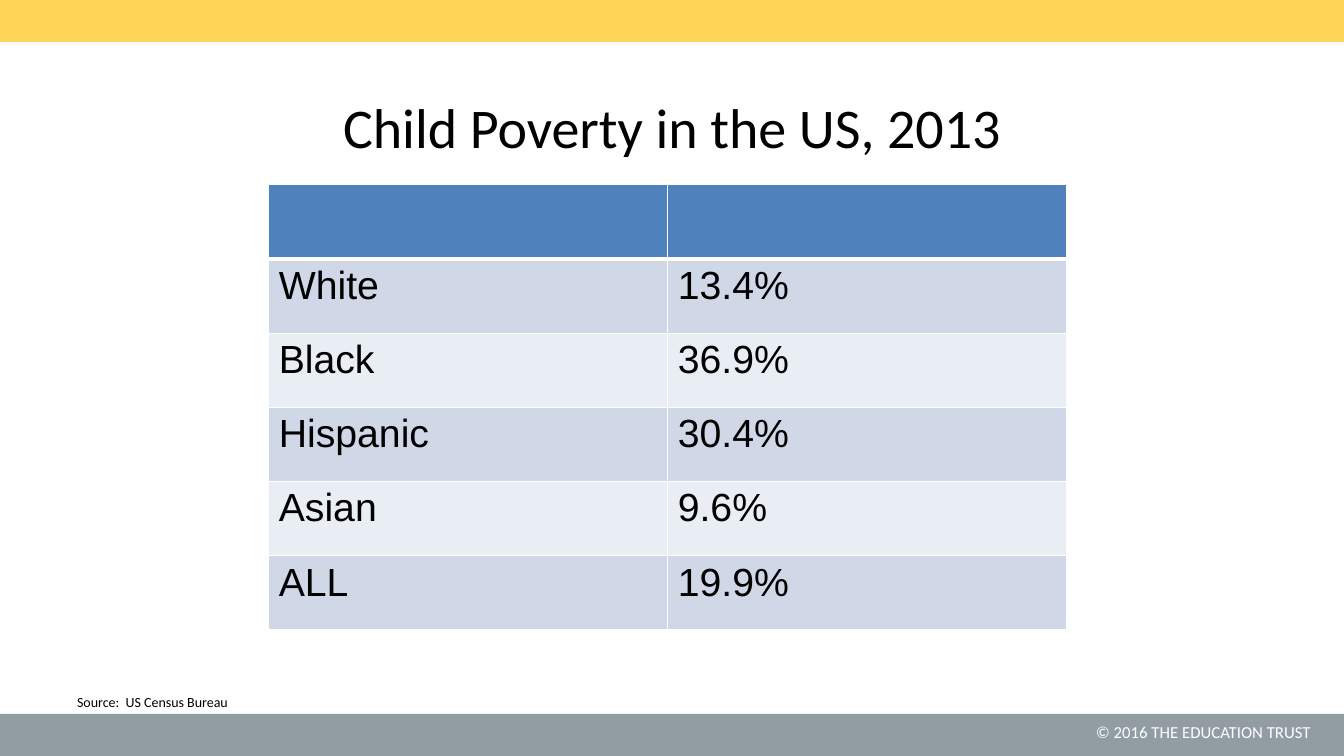
from typing import NamedTuple

from lxml import etree
from pptx import Presentation
from pptx import util as u
from pptx.dml.color import RGBColor
from pptx.enum import shapes, text
from pptx.oxml.ns import qn

PX = 9525
WIDE, HIGH = 1280, 720
WHITE, BLACK, BLUE = "FFFFFF", "000000", "4F81BD"
BANDS = ("D0D8E8", "E9EDF4")
LEFT, MID, RIGHT = text.PP_ALIGN.LEFT, text.PP_ALIGN.CENTER, text.PP_ALIGN.RIGHT


class Box(NamedTuple):
    x: int
    y: int
    w: int
    h: int

    def emu(self) -> list[int]:
        return [side * PX for side in self]


class Bar(NamedTuple):
    box: Box
    fill: str


class Label(NamedTuple):
    box: Box
    words: str
    size: int
    align: text.PP_ALIGN = LEFT
    anchor: text.MSO_ANCHOR = text.MSO_ANCHOR.TOP
    color: str = BLACK
    line: int | None = None


class Rate(NamedTuple):
    group: str
    share: str


BARS = [
    Bar(Box(0, 0, WIDE, 40), "FFD457"),
    Bar(Box(0, 680, WIDE, 40), "919CA3"),
]
LABELS = [
    Label(Box(885, 681, 373, 31), "© 2016 THE EDUCATION TRUST", 12,
          align=RIGHT, color=WHITE, line=16),
    Label(Box(64, 64, 1152, 112), "Child Poverty in the US, 2013", 40,
          align=MID, anchor=text.MSO_ANCHOR.MIDDLE),
    Label(Box(64, 656, 693, 24), "Source:  US Census Bureau", 10),
]
RATES = [
    Rate("White", "13.4%"),
    Rate("Black", "36.9%"),
    Rate("Hispanic", "30.4%"),
    Rate("Asian", "9.6%"),
    Rate("ALL", "19.9%"),
]
GRID = Box(256, 176, 760, 424)


def paint(fill, color: str) -> None:
    fill.solid()
    fill.fore_color.rgb = RGBColor.from_string(color)


def write(frame, words: str, *, size: int, font: str = "Calibri",
          color: str = BLACK, align: text.PP_ALIGN = LEFT,
          line: int | None = None) -> None:
    para = frame.paragraphs[0]
    para.alignment = align
    if line:
        para.line_spacing = u.Pt(line)
    run = para.add_run()
    run.text = words
    run.font.name = font
    run.font.size = u.Pt(size)
    run.font.color.rgb = RGBColor.from_string(color)


def draw_bar(slide, bar: Bar) -> None:
    shape = slide.shapes.add_shape(shapes.MSO_SHAPE.RECTANGLE, *bar.box.emu())
    shape.shadow.inherit = False
    paint(shape.fill, bar.fill)
    shape.line.fill.background()


def draw_label(slide, label: Label) -> None:
    frame = slide.shapes.add_textbox(*label.box.emu()).text_frame
    frame.word_wrap = True
    frame.vertical_anchor = label.anchor
    write(frame, label.words, size=label.size, color=label.color,
          align=label.align, line=label.line)


def edge(cell, base: int) -> None:
    """Rule a cell in white, with its bottom line base points wide."""
    props = cell._tc.get_or_add_tcPr()
    for side, width in zip("LRTB", (1, 1, 1, base)):
        rule = etree.SubElement(props, qn(f"a:ln{side}"), w=str(u.Pt(width)))
        fill = etree.SubElement(rule, qn("a:solidFill"))
        etree.SubElement(fill, qn("a:srgbClr"), val=WHITE)


def draw_table(slide, rates: list[Rate]) -> None:
    rows = len(rates) + 1
    table = slide.shapes.add_table(rows, 2, *GRID.emu()).table
    for cell in table.rows[0].cells:
        edge(cell, base=3)
        paint(cell.fill, BLUE)
    for row, rate in enumerate(rates):
        for cell, words in zip(table.rows[row + 1].cells, rate):
            edge(cell, base=1)
            paint(cell.fill, BANDS[row % 2])
            write(cell.text_frame, words, size=28, font="Arial")


def main() -> None:
    deck = Presentation()
    deck.slide_width, deck.slide_height = WIDE * PX, HIGH * PX
    slide = deck.slides.add_slide(deck.slide_layouts[6])
    for bar in BARS:
        draw_bar(slide, bar)
    for label in LABELS:
        draw_label(slide, label)
    draw_table(slide, RATES)
    deck.save("out.pptx")


if __name__ == "__main__":
    main()
